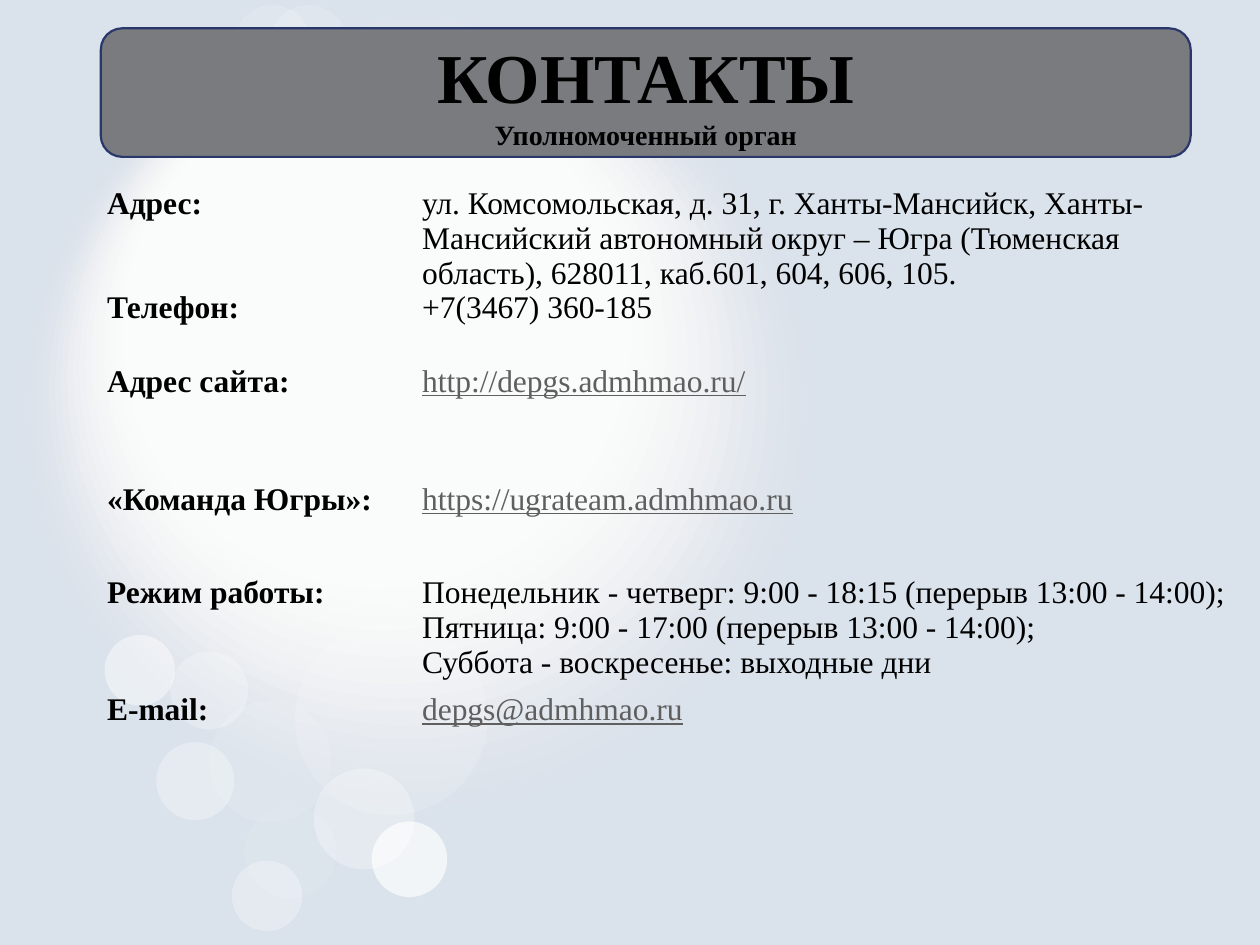
import pptx
import pptx.dml.color
import pptx.enum.shapes
import pptx.enum.text
import pptx.oxml.ns
import pptx.util
from lxml import etree

WIDTH, HEIGHT = 10, 7.5
FONT = "Times New Roman"
INK, LINK = "000000", "5F5F5F"
NO_GRID_STYLE = "{2D5ABB26-0587-4C30-8999-92F81FD0307C}"
TOP, MIDDLE = pptx.enum.text.MSO_ANCHOR.TOP, pptx.enum.text.MSO_ANCHOR.MIDDLE
PRESETS = pptx.enum.shapes.MSO_SHAPE
inches = pptx.util.Inches
qn = pptx.oxml.ns.qn

LINE_HEIGHT = 0.28  # one line of 18 pt text

# row height, anchor, label, value lines, is a link, top margin
CONTACTS = [
    (0.75, TOP, "Адрес:",
     ["ул. Комсомольская, д. 31, г. Ханты-Мансийск, Ханты-Мансийский автономный "
      "округ – Югра (Тюменская область), 628011, каб.601, 604, 606, 105."], False, 0),
    (0.58, TOP, "Телефон:", ["+7(3467) 360-185"], False, 0),
    (0.75, TOP, "Адрес сайта:", ["http://depgs.admhmao.ru/"], True, 0),
    (0.65, MIDDLE, "«Команда Югры»:", ["https://ugrateam.admhmao.ru"], True, 0),
    (1.05, TOP, "Режим работы:",
     ["Понедельник - четверг: 9:00 - 18:15 (перерыв 13:00 - 14:00);",
      "Пятница: 9:00 - 17:00 (перерыв 13:00 - 14:00);",
      "Суббота - воскресенье: выходные дни"], False, LINE_HEIGHT),
    (0.47, MIDDLE, "E-mail:", ["depgs@admhmao.ru"], True, 0),
]

# left, top, diameter, opacity in percent
BUBBLES = [
    (1.66, 5.56, 0.97, 12), (2.34, 4.94, 1.53, 15), (0.83, 5.04, 0.56, 45),
    (1.90, 4.78, 0.65, 8), (1.35, 5.17, 0.62, 25), (1.24, 5.89, 0.62, 33),
    (1.94, 6.40, 0.73, 7), (1.84, 6.83, 0.56, 31), (2.95, 6.52, 0.60, 67),
    (2.49, 6.10, 0.80, 31), (2.14, 0.04, 0.62, 15), (1.86, 0.04, 0.61, 16),
]


def color(hex_string):
    return pptx.dml.color.RGBColor.from_string(hex_string)


def add_filled(slide, preset, box, fill, opacity=100):
    shape = slide.shapes.add_shape(preset, *map(inches, box))
    shape.shadow.inherit = False
    shape.fill.solid()
    shape.fill.fore_color.rgb = color(fill)
    shape.line.fill.background()
    if opacity < 100:
        tint = shape.fill._xPr.find(qn("a:solidFill"))[0]
        etree.SubElement(tint, qn("a:alpha"), val=str(int(opacity * 1000)))
    return shape


def add_run(paragraph, text, size, bold=False, link=False):
    run = paragraph.add_run()
    run.text = text
    font = run.font
    font.name, font.size = FONT, pptx.util.Pt(size)
    font.bold, font.underline = bold, link
    font.color.rgb = color(LINK if link else INK)


def add_backdrop(slide, box):
    left, top, width, height = box
    add_filled(slide, PRESETS.RECTANGLE, box, "DAE2EB")
    # soft glow: stacked discs that shrink and gain opacity
    for step in range(1, 18):
        size = 6.39 - 0.138 * step
        disc = (left + 0.15 + 0.048 * step, top + 0.11 + 0.03 * step, size, size + 0.01)
        add_filled(slide, PRESETS.OVAL, disc, "FFFFFF", 1.5 + 1.5 * step)
    for x, y, size, opacity in BUBBLES:
        add_filled(slide, PRESETS.OVAL, (left + x, top + y, size, size), "FFFFFF", opacity)


def add_banner(slide, box):
    banner = add_filled(slide, PRESETS.ROUNDED_RECTANGLE, box, "797B7E")
    banner.line.color.rgb = color("2A376B")
    banner.line.width = pptx.util.Pt(1.25)
    frame = banner.text_frame
    frame.word_wrap = True
    frame.vertical_anchor = MIDDLE
    title, subtitle = frame.paragraphs[0], frame.add_paragraph()
    for paragraph, text, size in ((title, "КОНТАКТЫ", 40),
                                  (subtitle, "Уполномоченный орган", 16)):
        paragraph.alignment = pptx.enum.text.PP_ALIGN.CENTER
        add_run(paragraph, text, size, bold=True)


def fill_cell(cell, lines, anchor, margin_top, bold=False, link=False):
    cell.margin_left = cell.margin_right = inches(0.05)
    cell.margin_top = inches(margin_top)
    cell.margin_bottom = inches(0.1 if bold and anchor == TOP else 0)
    cell.vertical_anchor = anchor
    # no borders, no fill
    properties = cell._tc.get_or_add_tcPr()
    for side in ("lnL", "lnR", "lnT", "lnB"):
        border = etree.SubElement(properties, qn(f"a:{side}"))
        etree.SubElement(border, qn("a:noFill"))
    cell.fill.background()
    frame = cell.text_frame
    for index, text in enumerate(lines):
        paragraph = frame.add_paragraph() if index else frame.paragraphs[0]
        add_run(paragraph, text, 18, bold, link)


def add_contacts(slide, box):
    left, top, width, label_width = box
    height = sum(row[0] for row in CONTACTS)
    table = slide.shapes.add_table(
        len(CONTACTS), 2, *map(inches, (left, top, width, height))).table
    table.first_row = table.horz_banding = False
    table._tbl.tblPr.find(qn("a:tableStyleId")).text = NO_GRID_STYLE
    table.columns[0].width = inches(label_width)
    table.columns[1].width = inches(width - label_width)
    for index, (row_height, anchor, label, lines, link, margin) in enumerate(CONTACTS):
        table.rows[index].height = inches(row_height)
        fill_cell(table.cell(index, 0), [label], anchor, margin, bold=True)
        fill_cell(table.cell(index, 1), lines, anchor, margin, link=link)


def main():
    deck = pptx.Presentation()
    deck.slide_width, deck.slide_height = inches(WIDTH), inches(HEIGHT)
    slide = deck.slides.add_slide(deck.slide_layouts[6])
    margin = 0.08 * WIDTH
    add_backdrop(slide, (0, 0, WIDTH, HEIGHT))
    add_banner(slide, (margin, 0.03 * HEIGHT, 0.865 * WIDTH, 0.136 * HEIGHT))
    add_contacts(slide, (margin, 0.197 * HEIGHT, 0.899 * WIDTH, 0.25 * WIDTH))
    deck.save("out.pptx")


if __name__ == "__main__":
    main()
